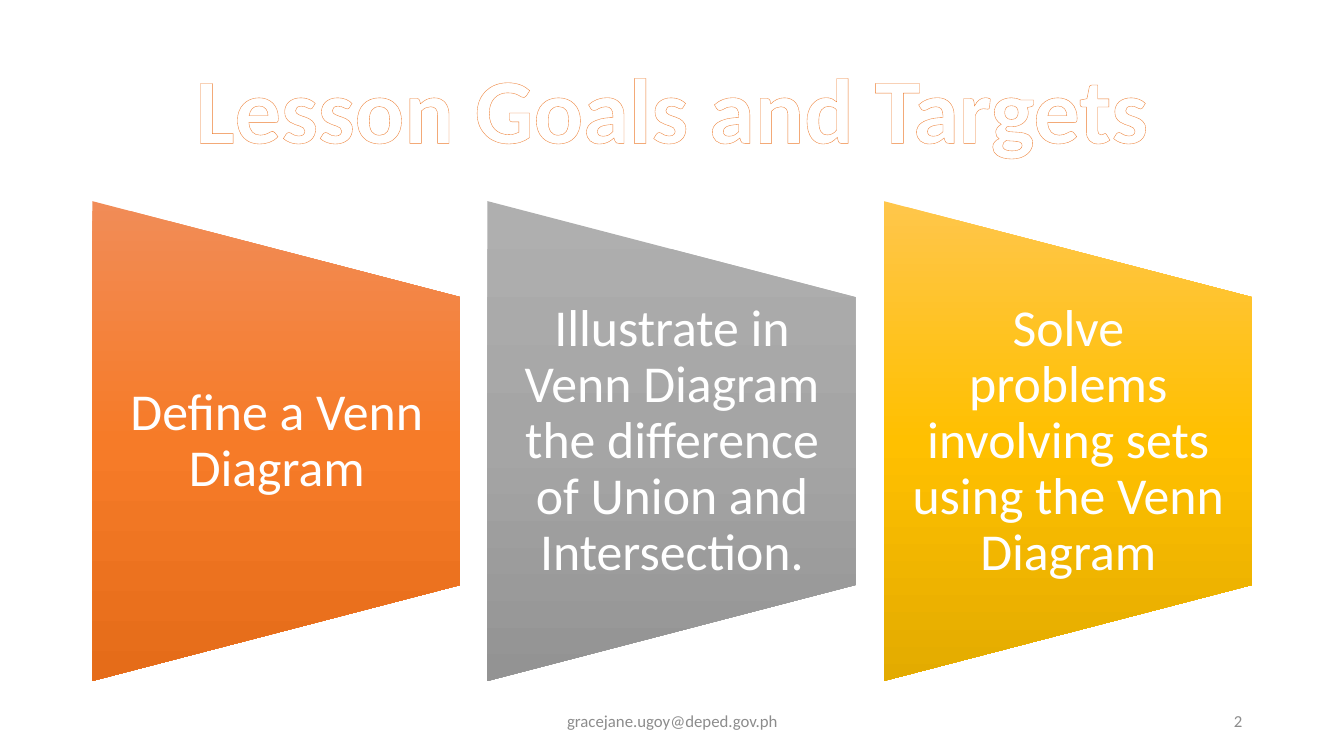
from lxml import etree
from pptx import Presentation
from pptx.dml.color import RGBColor
from pptx.enum.shapes import MSO_SHAPE as Shape
from pptx.enum.text import MSO_ANCHOR as Anchor, PP_ALIGN as Align
from pptx.oxml import parse_xml
from pptx.oxml.ns import nsdecls, qn
from pptx.util import Pt

PX = 9144  # EMU, 100 px to the inch
COLOURS = {"white": "FFFFFF", "outline": "ED7D31", "footer": "8C8C8C"}
GOALS = [
    ("Define a Venn Diagram", ("F18C57", "F67B28", "E56C19")),
    ("Illustrate in Venn Diagram the difference of Union and Intersection.",
     ("AFAFAF", "A5A5A5", "939393")),
    ("Solve problems involving sets using the Venn Diagram",
     ("FFC64B", "FFC000", "E3AB00")),
]
GOAL_LEFT, GOAL_STEP = 92, 392.5


class SlideBuilder:
    font = "Calibri"

    def __init__(self, page):
        self.page = page

    def text(self, text, left, top, width, height, size, colour="white", bold=False,
             align=Align.CENTER, spacing=1.0, inset=10, inset_y=5, outline=None):
        box = self.page.shapes.add_textbox(*(n * PX for n in (left, top, width, height)))
        frame = box.text_frame
        frame.word_wrap = True
        frame.vertical_anchor = Anchor.MIDDLE
        frame.margin_left = frame.margin_right = inset * PX
        frame.margin_top = frame.margin_bottom = inset_y * PX
        para = frame.paragraphs[0]
        para.alignment, para.line_spacing = align, spacing
        span = para.add_run()
        span.text = text
        font = span.font
        font.name, font.size, font.bold = self.font, Pt(size), bold
        font.color.rgb = RGBColor.from_string(COLOURS[colour])
        if outline:
            self.outline_text(span, COLOURS[outline])

    def outline_text(self, span, colour):
        line = parse_xml(
            f'<a:ln {nsdecls("a")} w="6600"><a:solidFill>'
            f'<a:srgbClr val="{colour}"/></a:solidFill></a:ln>')
        span.font._element.insert(0, line)

    def trapezoid(self, left, top, width, height, stops):
        """Draw a trapezoid turned to narrow rightwards, shaded from top to bottom."""
        shape = self.page.shapes.add_shape(
            Shape.FLOWCHART_MANUAL_OPERATION, *(n * PX for n in (left, top, width, height)))
        shape.rotation = 270
        shape.shadow.inherit = False
        shape.line.fill.background()
        shape.fill.gradient()
        gradient = shape._element.spPr.find(qn("a:gradFill"))
        gradient.set("rotWithShape", "0")
        gradient.find(qn("a:lin")).set("ang", "5400000")
        stop_list = gradient.find(qn("a:gsLst"))
        stop_list.clear()
        for index, colour in enumerate(stops):
            stop = etree.SubElement(stop_list, qn("a:gs"), pos=str(index * 50000))
            etree.SubElement(stop, qn("a:srgbClr"), val=colour)


def main():
    deck = Presentation()
    deck.slide_width, deck.slide_height = 1333 * PX, 750 * PX
    builder = SlideBuilder(deck.slides.add_slide(deck.slide_layouts[6]))

    builder.text("Lesson Goals and Targets", 92, 40, 1150, 145, size=66, bold=True,
                 spacing=0.9, outline="outline")
    for index, (goal, stops) in enumerate(GOALS):
        left = round(GOAL_LEFT + index * GOAL_STEP)
        builder.trapezoid(left - 56, 255, 476, 365, stops)
        builder.text(goal, left, 295, 365, 286, size=37, spacing=0.9, inset=26, inset_y=0)

    builder.text("gracejane.ugoy@deped.gov.ph", 442, 695, 450, 40, size=12, colour="footer")
    builder.text("2", 942, 695, 300, 40, size=12, colour="footer", align=Align.RIGHT)
    deck.save("out.pptx")


if __name__ == "__main__":
    main()
